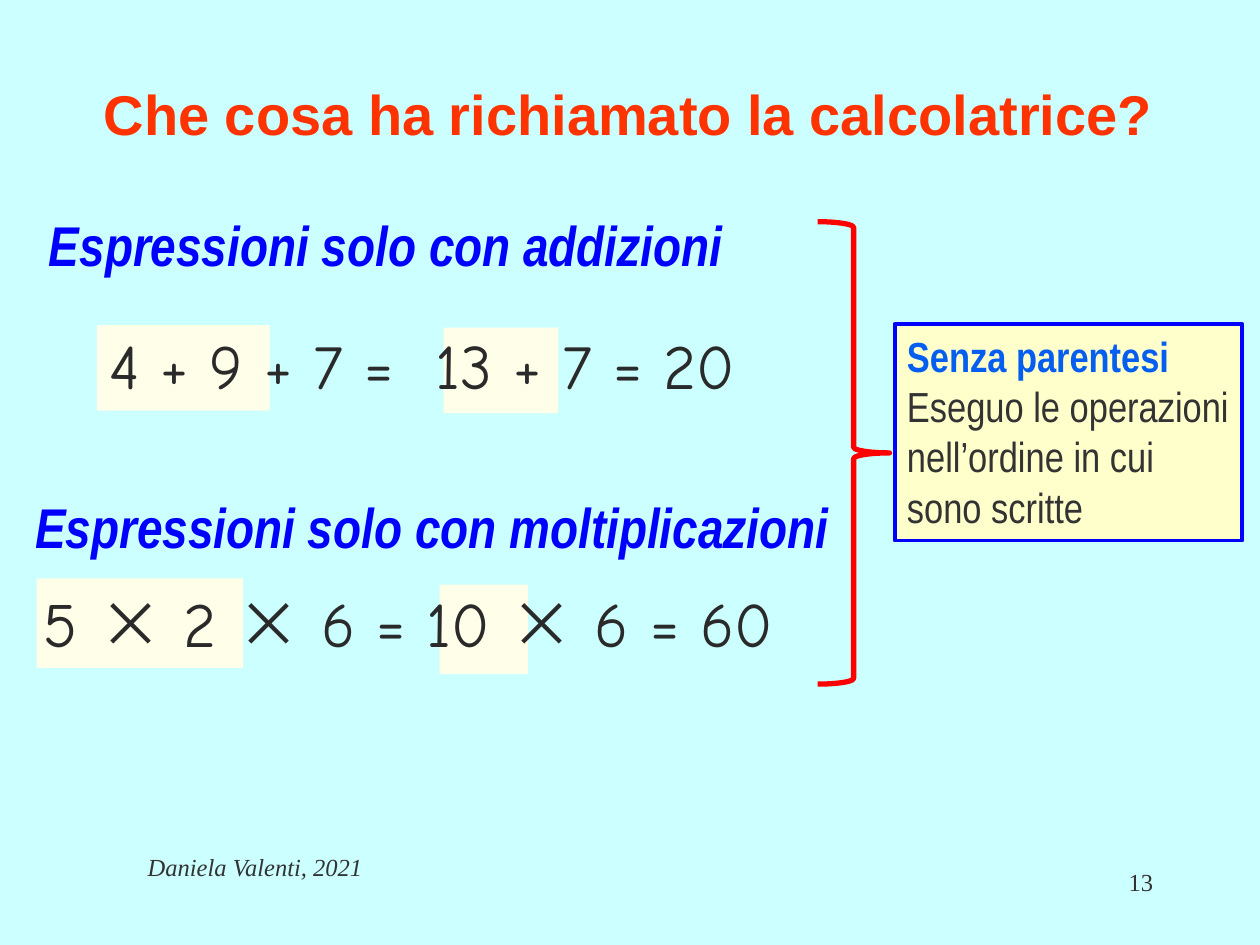
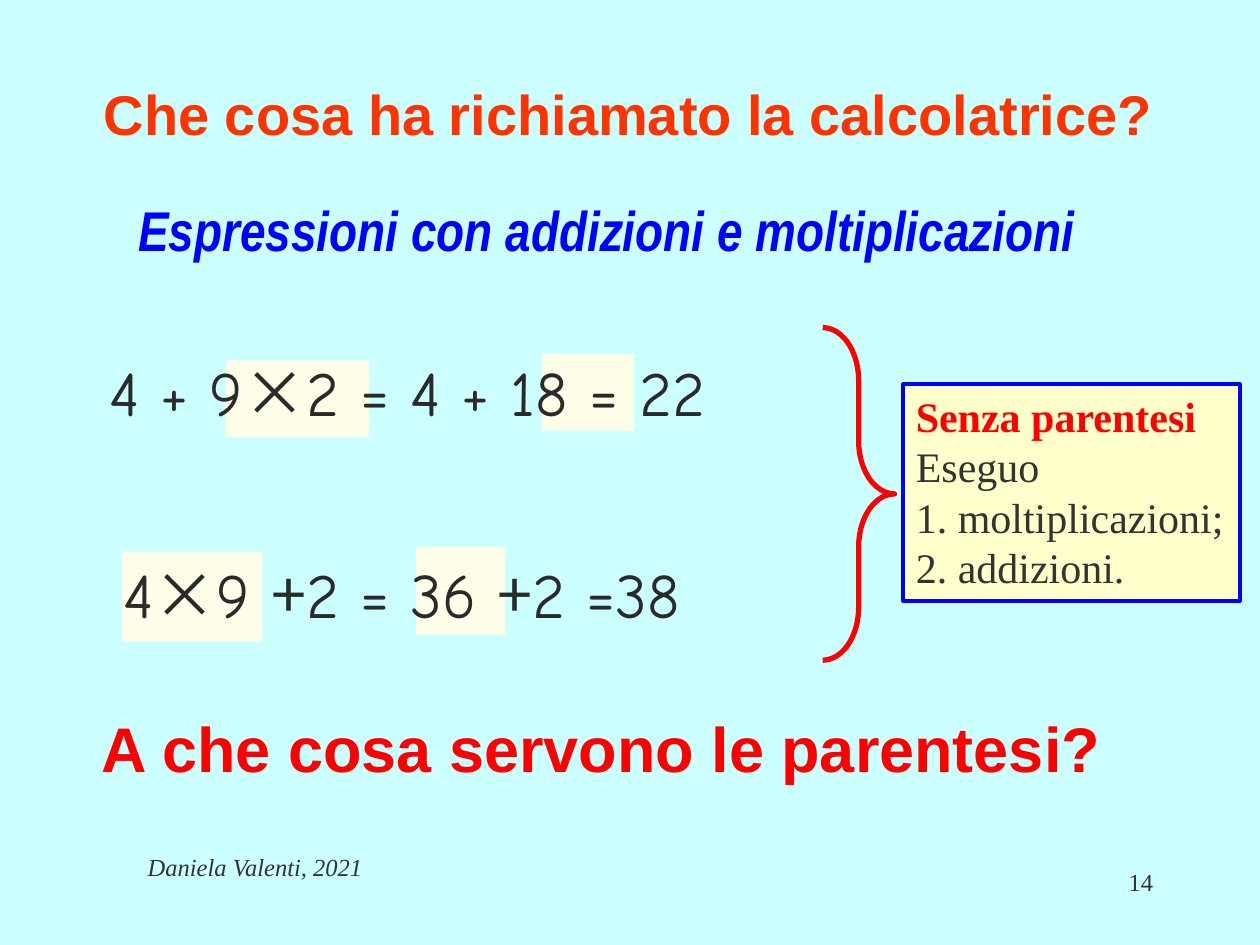
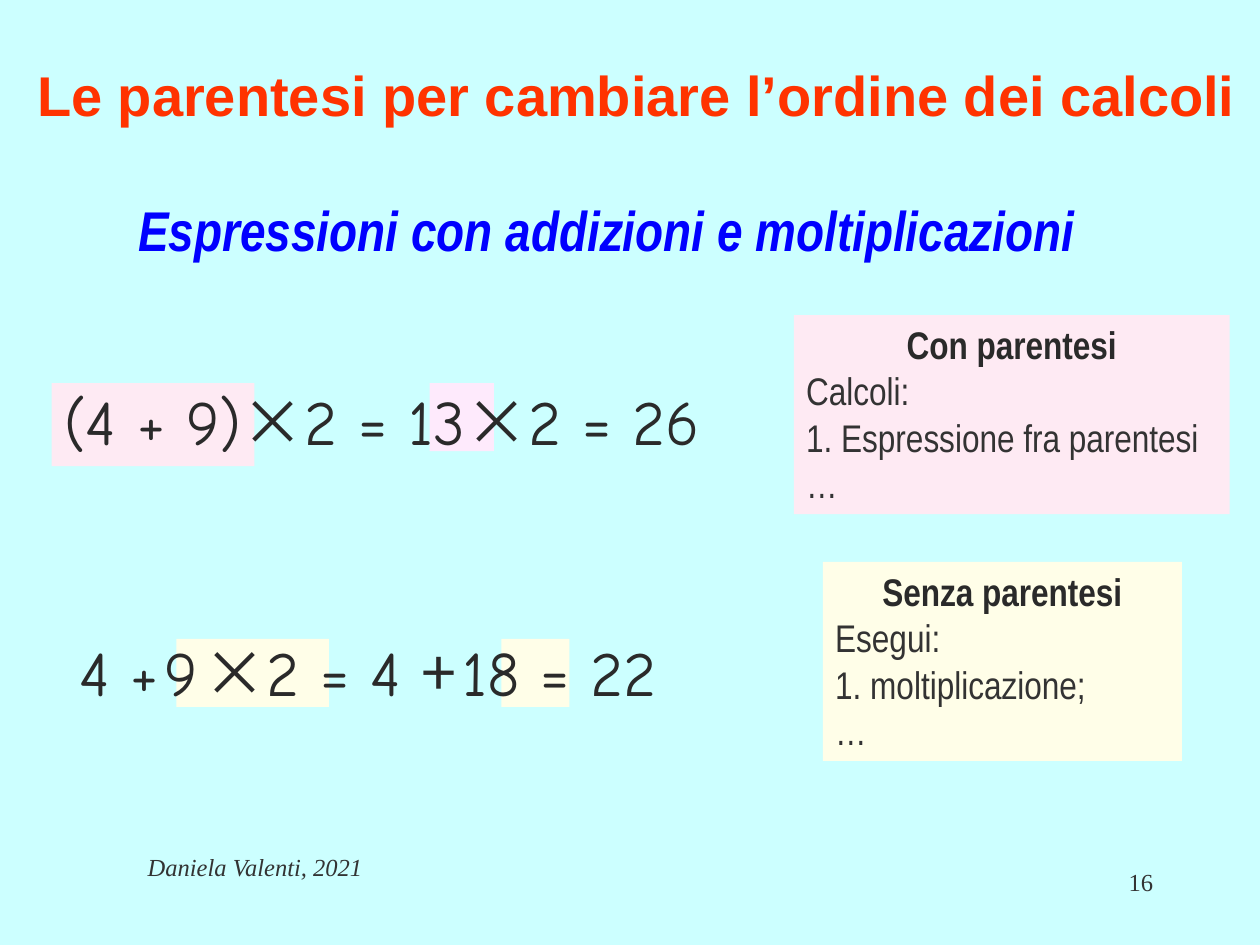
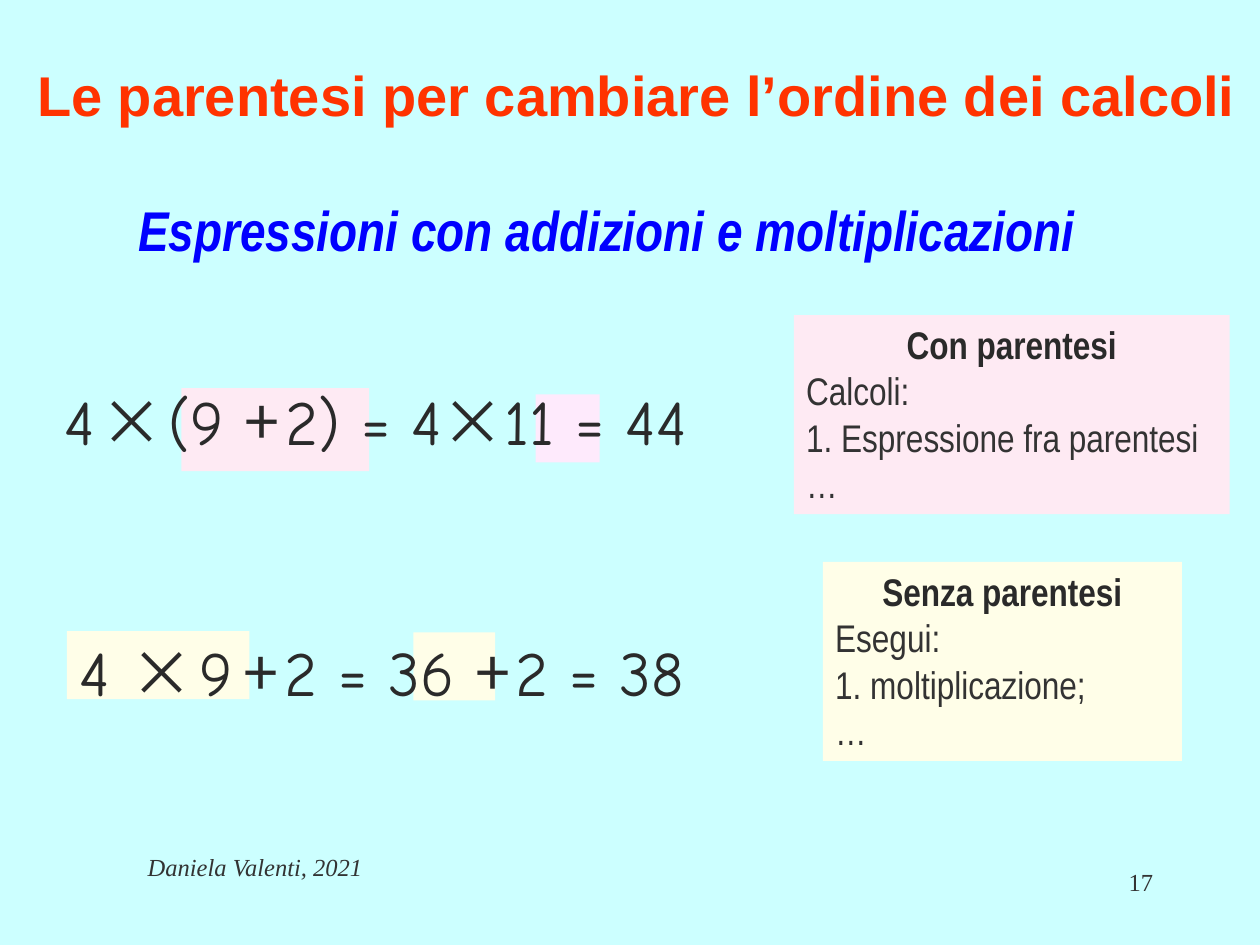
from pptx import Presentation
from pptx.dml.color import RGBColor
from pptx.enum.shapes import MSO_SHAPE
from pptx.enum.text import MSO_ANCHOR, PP_ALIGN
from pptx.util import Inches, Pt

SKY = RGBColor(0xCC, 0xFF, 0xFF)
ORANGE = RGBColor(0xFF, 0x33, 0x00)
RED = RGBColor(0xFF, 0x00, 0x00)
BLUE = RGBColor(0x00, 0x00, 0xFF)
AZURE = RGBColor(0x05, 0x5E, 0xF0)
GREY = RGBColor(0x33, 0x33, 0x33)
INK = RGBColor(0x2A, 0x2A, 0x2A)
YELLOW = RGBColor(0xFF, 0xFF, 0xCC)
CREAM = RGBColor(0xFF, 0xFE, 0xE8)
PINK = RGBColor(0xFE, 0xEA, 0xF3)
LILAC = RGBColor(0xFE, 0xEA, 0xFC)

SANS, NARROW, SERIF = "Arial", "Arial Narrow", "Times New Roman"
DIGITS, SYMBOLS = "Comic Neue", "Noto Sans CJK JP"

# Content: places are (left, top, width, height) in inches
AUTHOR = "Daniela Valenti, 2021"
RECALL = ("Che cosa ha richiamato la calcolatrice?", (0.25, 0.5, 9.48, 0.79))
BRACKETS = ("Le parentesi per cambiare l’ordine dei calcoli", (0.19, 0.35, 9.73, 0.79))
MIXED = ("Espressioni con addizioni e moltiplicazioni", (1, 1.5, 7.74, 0.64))

BRACKET_NOTES = [
    dict(place=(6.53, 4.46, 2.85, 1.58), fill=CREAM, font=NARROW, size=22,
         head="Senza parentesi", head_color=INK,
         body=["Esegui:", "1. moltiplicazione;\n…"]),
    dict(place=(6.3, 2.5, 3.46, 1.58), fill=PINK, font=NARROW, size=22,
         head="Con parentesi", head_color=INK,
         body=["Calcoli:", "1. Espressione fra parentesi\n…"]),
]

# In an equation, a lone "×" or "+" takes the symbol font and a lone " " is a small gap
SLIDES = [
    dict(
        number="13", number_width=2.08, title=RECALL,
        headings=[("Espressioni solo con moltiplicazioni", (0.18, 3.86, 6.62, 0.64)),
                  ("Espressioni solo con addizioni", (0.29, 1.62, 5.56, 0.64))],
        highlights=[(CREAM, (0.77, 2.58, 1.37, 0.68)), (CREAM, (3.52, 2.6, 0.91, 0.68)),
                    (CREAM, (0.29, 4.59, 1.64, 0.71)), (CREAM, (3.49, 4.64, 0.7, 0.71))],
        equations=[(["4 + 9 + 7 =  13 + 7 = 20"], (0.77, 2.54, 5.88, 0.71)),
                   (["5 ", "×", " 2 ", "×", " 6 = 10 ", "×", " 6 = 60"],
                    (0.25, 4.59, 6.4, 0.71))],
        brace=((6.49, 1.76, 0.57, 3.67), 0.08),
        notes=[dict(place=(7.1, 2.57, 2.76, 1.72), fill=YELLOW, line=BLUE,
                    font=NARROW, size=24, head="Senza parentesi", head_color=AZURE,
                    body=["Eseguo le operazioni nell’ordine in cui sono scritte"])],
    ),
    dict(
        number="14", number_width=2.08, title=RECALL, headings=[MIXED],
        highlights=[(CREAM, (3.3, 4.34, 0.71, 0.7)), (CREAM, (0.97, 4.38, 1.11, 0.71)),
                    (CREAM, (4.3, 2.81, 0.73, 0.61)), (CREAM, (1.79, 2.86, 1.14, 0.61))],
        equations=[(["4 + 9", "×", "2 = 4 + 18 = 22"], (0.77, 2.76, 5.56, 0.71)),
                   (["4", "×", "9 ", "+", "2 = 36 ", "+", "2 =38"],
                    (0.88, 4.36, 5.61, 0.71))],
        brace=((6.53, 2.6, 0.57, 2.64), 0.74),
        notes=[dict(place=(7.17, 3.05, 2.67, 1.72), fill=YELLOW, line=BLUE,
                    font=SERIF, size=24, head="Senza parentesi", head_color=RED,
                    body=["Eseguo", "1. moltiplicazioni;\n2. addizioni."])],
        question=("A che cosa servono le parentesi?", (0.71, 5.58, 8.9, 0.71)),
    ),
    dict(
        number="16", number_width=0.4, title=BRACKETS, headings=[MIXED],
        highlights=[(LILAC, (3.41, 3.04, 0.51, 0.54)), (PINK, (0.41, 3.04, 1.61, 0.66)),
                    (CREAM, (3.98, 5.07, 0.54, 0.54)), (CREAM, (1.4, 5.07, 1.21, 0.54))],
        equations=[(["(4 + 9)", "×", "2 = 13", "×", "2 = 26"], (0.41, 2.99, 5.85, 0.71)),
                   (["4 +", " ", "9", " ", "×", "2 = 4 ", "+", " ", "18 = 22"],
                    (0.53, 4.98, 5.61, 0.71))],
        notes=BRACKET_NOTES,
    ),
    dict(
        number="17", number_width=0.4, title=BRACKETS, headings=[MIXED],
        highlights=[(CREAM, (3.28, 5.02, 0.65, 0.54)), (CREAM, (0.53, 5.01, 1.45, 0.54)),
                    (LILAC, (4.25, 3.13, 0.51, 0.54)), (PINK, (1.44, 3.08, 1.49, 0.66))],
        equations=[(["4 ", "×", " ", "9", " ", " ", "+", " ", "2 = 36 ", "+", " ", "2 = 38"],
                    (0.53, 4.98, 5.61, 0.71)),
                   (["4", " ", "×", " ", "(9 ", "+", " ", "2) = 4", "×", "11 = 44"],
                    (0.41, 2.99, 5.85, 0.71))],
        notes=BRACKET_NOTES,
    ),
]


def inches(place):
    return [Inches(length) for length in place]


def add_span(para, text, font, size, color, bold=False, italic=False):
    for index, line in enumerate(text.split("\n")):
        if index:
            para.add_line_break()
        span = para.add_run()
        span.text = line
        span.font.name = font
        span.font.size = Pt(size)
        span.font.color.rgb = color
        span.font.bold = bold
        span.font.italic = italic


def add_box(page, place, align=PP_ALIGN.LEFT, anchor=MSO_ANCHOR.TOP):
    """Add a text box and return its first paragraph."""
    frame = page.shapes.add_textbox(*inches(place)).text_frame
    frame.word_wrap = True
    frame.vertical_anchor = anchor
    para = frame.paragraphs[0]
    para.alignment = align
    return para


def add_panel(page, kind, place, fill=None, line=None, width=2.25):
    panel = page.shapes.add_shape(kind, *inches(place))
    panel.shadow.inherit = False
    if fill is None:
        panel.fill.background()
    else:
        panel.fill.solid()
        panel.fill.fore_color.rgb = fill
    if line is None:
        panel.line.fill.background()
    else:
        panel.line.color.rgb = line
        panel.line.width = Pt(width)
    return panel


def add_equation(page, pieces, place):
    para = add_box(page, place)
    for piece in pieces:
        font = SYMBOLS if piece in ("×", "+", " ") else DIGITS
        add_span(para, piece, font, 14 if piece == " " else 36, INK)


def add_note(page, place, fill, font, size, head, head_color, body, line=None):
    frame = add_panel(page, MSO_SHAPE.RECTANGLE, place, fill, line).text_frame
    frame.word_wrap = True
    frame.vertical_anchor = MSO_ANCHOR.TOP
    para = frame.paragraphs[0]
    para.alignment = PP_ALIGN.LEFT if line else PP_ALIGN.CENTER
    add_span(para, head, font, size, head_color, bold=True)
    for text in body:
        para = frame.add_paragraph()
        para.alignment = PP_ALIGN.LEFT
        add_span(para, text, font, size, GREY)


def add_frame(page, title, number, number_width):
    """Add what every slide shares: title, author and slide number."""
    text, place = title
    para = add_box(page, place, PP_ALIGN.CENTER, MSO_ANCHOR.MIDDLE)
    add_span(para, text, SANS, 32, ORANGE, bold=True)
    para = add_box(page, (0.44, 6.71, 3.17, 0.5), PP_ALIGN.CENTER)
    add_span(para, AUTHOR, SERIF, 14, GREY, italic=True)
    para = add_box(page, (9.25 - number_width, 6.83, number_width, 0.5), PP_ALIGN.RIGHT)
    add_span(para, number, SERIF, 14, GREY)


def build_slide(deck, content):
    page = deck.slides.add_slide(deck.slide_layouts[6])
    add_frame(page, content["title"], content["number"], content["number_width"])
    for text, place in content["headings"]:
        add_span(add_box(page, place), text, NARROW, 32, BLUE, bold=True, italic=True)
    # Highlights lie under the equations
    for color, place in content["highlights"]:
        add_panel(page, MSO_SHAPE.RECTANGLE, place, color)
    for pieces, place in content["equations"]:
        add_equation(page, pieces, place)
    # Brace and rules
    if "brace" in content:
        place, curve = content["brace"]
        brace = add_panel(page, MSO_SHAPE.RIGHT_BRACE, place, line=RED, width=3)
        brace.adjustments[0] = curve
    for note in content["notes"]:
        add_note(page, **note)
    if "question" in content:
        text, place = content["question"]
        add_span(add_box(page, place), text, SANS, 36, RED, bold=True)


def main():
    deck = Presentation()
    deck.slide_width, deck.slide_height = Inches(10), Inches(7.5)
    background = deck.slide_master.background.fill
    background.solid()
    background.fore_color.rgb = SKY
    for content in SLIDES:
        build_slide(deck, content)
    deck.save("out.pptx")


if __name__ == "__main__":
    main()
